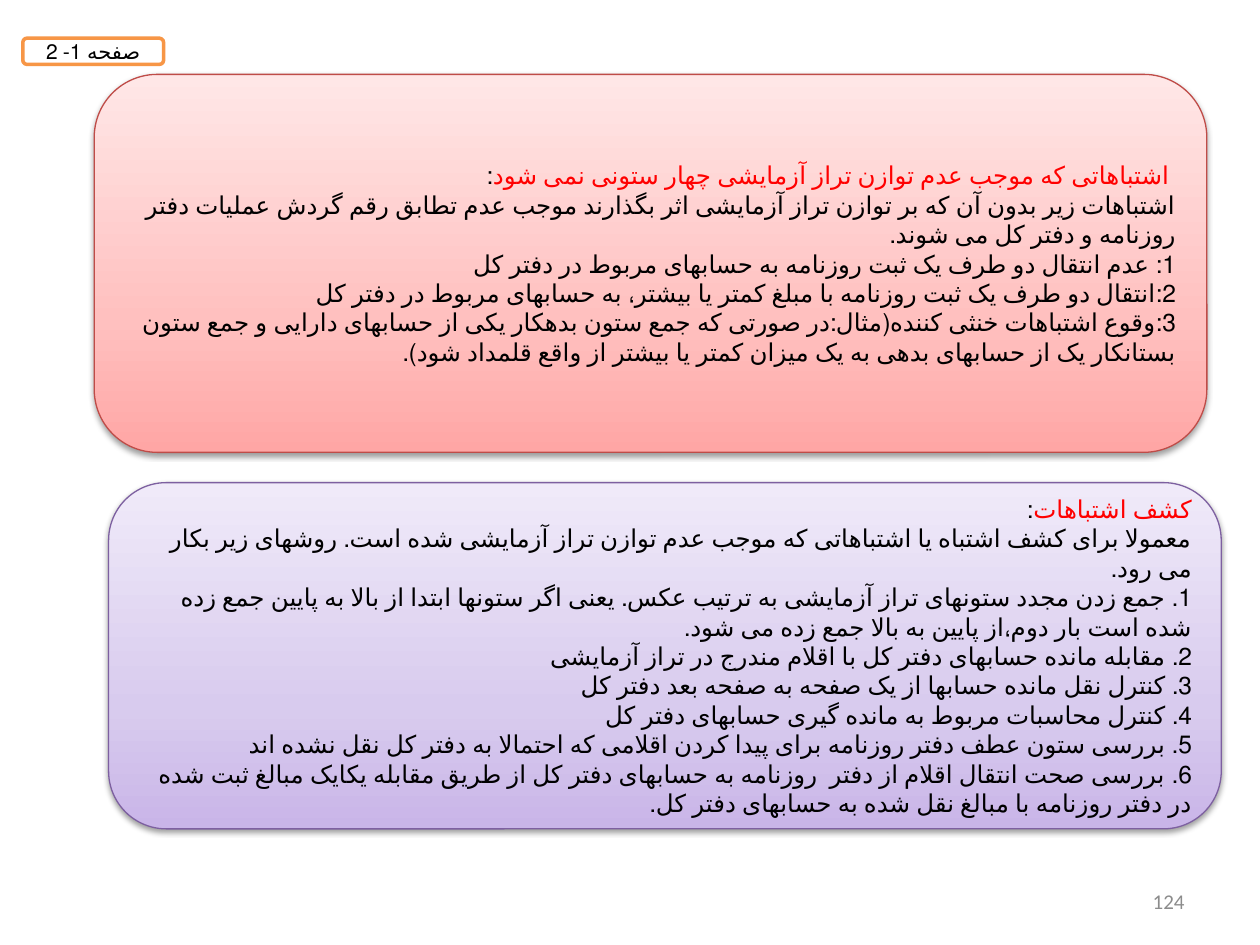
"""Build a slide on trial balance errors and how to find them."""
from copy import deepcopy
from dataclasses import dataclass

from lxml import etree
from pptx import Presentation
from pptx import util as u
from pptx.dml.color import RGBColor
from pptx.enum import lang, shapes, text
from pptx.oxml.ns import qn

FONT = "Calibri"
BLACK, RED, GREY, WHITE, ORANGE = "000000", "FF0000", "8C8C8C", "FFFFFF", "F79646"
STOPS = (0, 0.35, 1)


@dataclass
class Box:
    left: float
    top: float
    width: float
    height: float


@dataclass
class Panel:
    box: Box
    gradient: tuple[str, str, str]
    line: str
    heading: str
    lines: list[str]


PANELS = [
    Panel(
        Box(1.9, 1.5, 22.43, 7.62), ("FFA6A5", "FFC0BF", "FFE7E7"), "BF4C48",
        " اشتباهاتی که موجب عدم توازن تراز آزمایشی چهار ستونی نمی شود",
        [
            "اشتباهات زیر بدون آن که بر توازن تراز آزمایشی اثر بگذارند موجب عدم تطابق رقم گردش عملیات دفتر روزنامه و دفتر کل می شوند.",
            "1: عدم انتقال دو طرف یک ثبت روزنامه به حسابهای مربوط در دفتر کل",
            "2:انتقال دو طرف یک ثبت روزنامه با مبلغ کمتر یا بیشتر، به حسابهای مربوط در دفتر کل",
            "3:وقوع اشتباهات خنثی کننده(مثال:در صورتی که جمع ستون بدهکار یکی از حسابهای دارایی و جمع ستون بستانکار یک از حسابهای بدهی به یک میزان کمتر یا بیشتر از واقع قلمداد شود).",
        ],
    ),
    Panel(
        Box(2.19, 9.73, 22.43, 6.98), ("C9B5E8", "D8CBEE", "F0EAF9"), "7D60A0",
        "کشف اشتباهات",
        [
            "معمولا برای کشف اشتباه یا اشتباهاتی که موجب عدم توازن تراز آزمایشی شده است. روشهای زیر بکار می رود.",
            "1. جمع زدن مجدد ستونهای تراز آزمایشی به ترتیب عکس. یعنی اگر ستونها ابتدا از بالا به پایین جمع زده شده است بار دوم،از پایین به بالا جمع زده می شود.",
            "2. مقابله مانده حسابهای دفتر کل با اقلام مندرج در تراز آزمایشی",
            "3. کنترل نقل مانده حسابها از یک صفحه به صفحه بعد دفتر کل",
            "4. کنترل محاسبات مربوط به مانده گیری حسابهای دفتر کل",
            "5. بررسی ستون عطف دفتر روزنامه برای پیدا کردن اقلامی که احتمالا به دفتر کل نقل نشده اند",
            "6. بررسی صحت انتقال اقلام از دفتر  روزنامه به حسابهای دفتر کل از طریق مقابله یکایک مبالغ ثبت شده در دفتر روزنامه با مبالغ نقل شده به حسابهای دفتر کل.",
        ],
    ),
]


def rgb(value: str) -> RGBColor:
    return RGBColor.from_string(value)


def place(box: Box) -> list[u.Cm]:
    return [u.Cm(v) for v in (box.left, box.top, box.width, box.height)]


def prepare(sp):
    tf = sp.text_frame
    tf.word_wrap = True
    tf.vertical_anchor = text.MSO_ANCHOR.MIDDLE
    return tf


def style(p, size: int, color: str, align) -> None:
    p.alignment = align
    p.font.name, p.font.size = FONT, u.Pt(size)
    p.font.color.rgb = rgb(color)
    for r in p.runs:
        r.font.language_id = lang.MSO_LANGUAGE_ID.FARSI


def rounded(s, box: Box, line: str, weight: float):
    sp = s.shapes.add_shape(shapes.MSO_SHAPE.ROUNDED_RECTANGLE, *place(box))
    sp.shadow.inherit = False
    sp.line.color.rgb = rgb(line)
    sp.line.width = u.Pt(weight)
    return sp


def fill_gradient(sp, colors: tuple[str, str, str]) -> None:
    sp.fill.gradient()
    sp.fill.gradient_angle = 90
    stops = sp._element.spPr.find(".//" + qn("a:gsLst"))
    stops.append(deepcopy(stops[0]))
    for stop, position, color in zip(sp.fill.gradient_stops, STOPS, colors):
        stop.position = position
        stop.color.rgb = rgb(color)


def add_shadow(sp) -> None:
    effects = sp._element.spPr.find(qn("a:effectLst"))
    shadow = etree.SubElement(effects, qn("a:outerShdw"), blurRad=str(u.Pt(3.1)),
                              dist=str(u.Pt(1.6)), dir="5400000", rotWithShape="0")
    color = etree.SubElement(shadow, qn("a:srgbClr"), val=BLACK)
    etree.SubElement(color, qn("a:alpha"), val="38000")


def draw_panel(s, panel: Panel) -> None:
    sp = rounded(s, panel.box, panel.line, 0.75)
    fill_gradient(sp, panel.gradient)
    add_shadow(sp)
    tf = prepare(sp)
    p = tf.paragraphs[0]
    r = p.add_run()
    r.text = panel.heading
    r.font.color.rgb = rgb(RED)
    p.add_run().text = ":"
    for line in panel.lines:
        tf.add_paragraph().text = line
    for p in tf.paragraphs:
        style(p, 14, BLACK, text.PP_ALIGN.RIGHT)
        p._p.get_or_add_pPr().set("rtl", "1")


def draw_page_tag(s) -> None:
    sp = rounded(s, Box(0.46, 0.77, 2.84, 0.53), ORANGE, 2)
    sp.fill.solid()
    sp.fill.fore_color.rgb = rgb(WHITE)
    p = prepare(sp).paragraphs[0]
    p.text = "صفحه 1- 2"
    style(p, 12, BLACK, text.PP_ALIGN.CENTER)


def draw_slide_number(s) -> None:
    sp = s.shapes.add_textbox(*place(Box(18.2, 17.65, 5.93, 1.02)))
    p = prepare(sp).paragraphs[0]
    p.text = "124"
    style(p, 12, GREY, text.PP_ALIGN.RIGHT)


def main() -> None:
    prs = Presentation()
    prs.slide_width, prs.slide_height = u.Cm(25.4), u.Cm(19.05)
    s = prs.slides.add_slide(prs.slide_layouts[6])
    for panel in PANELS:
        draw_panel(s, panel)
    draw_page_tag(s)
    draw_slide_number(s)
    prs.save("out.pptx")


if __name__ == "__main__":
    main()
